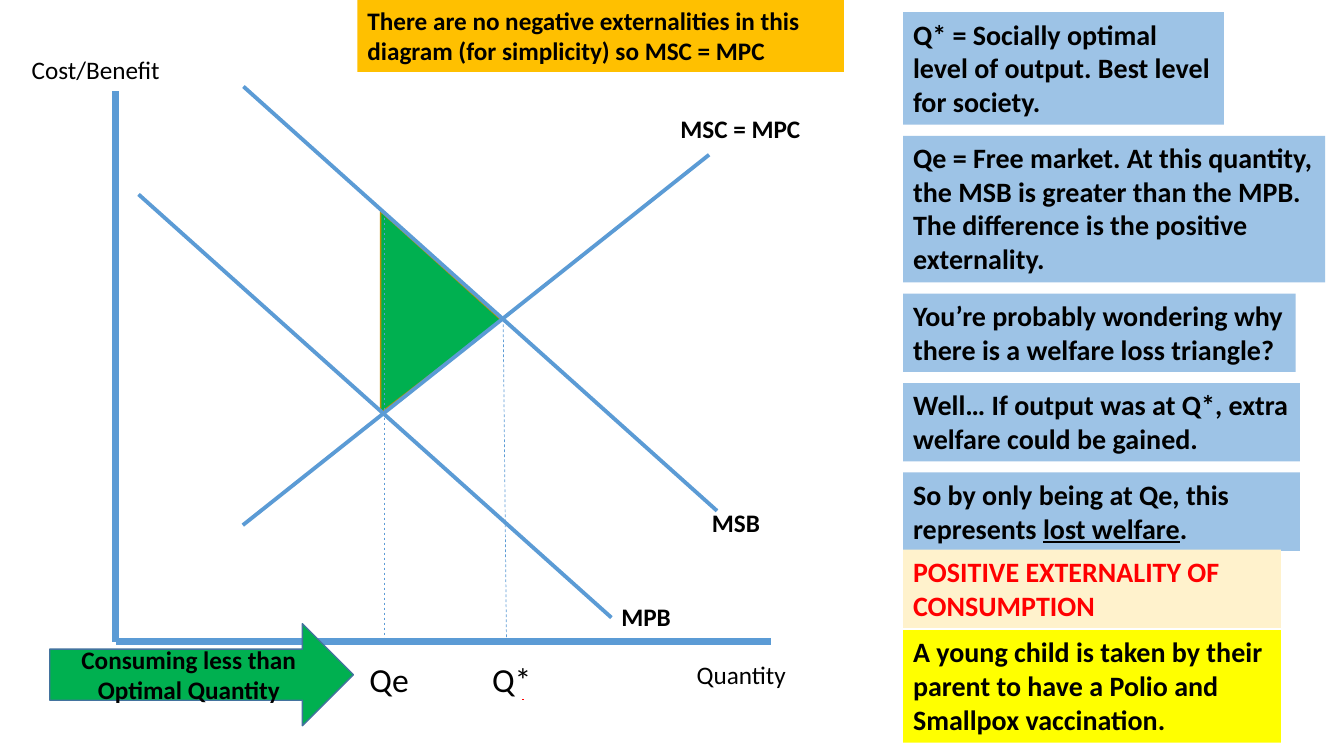
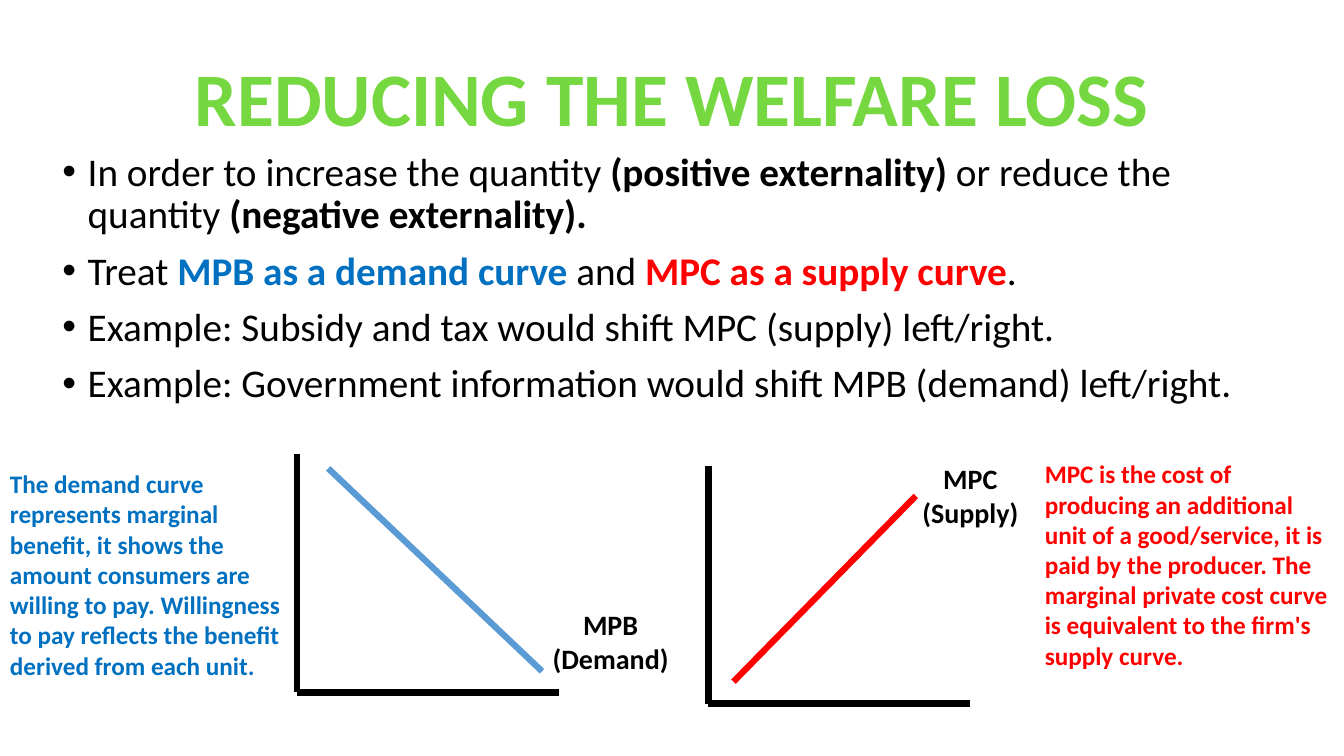
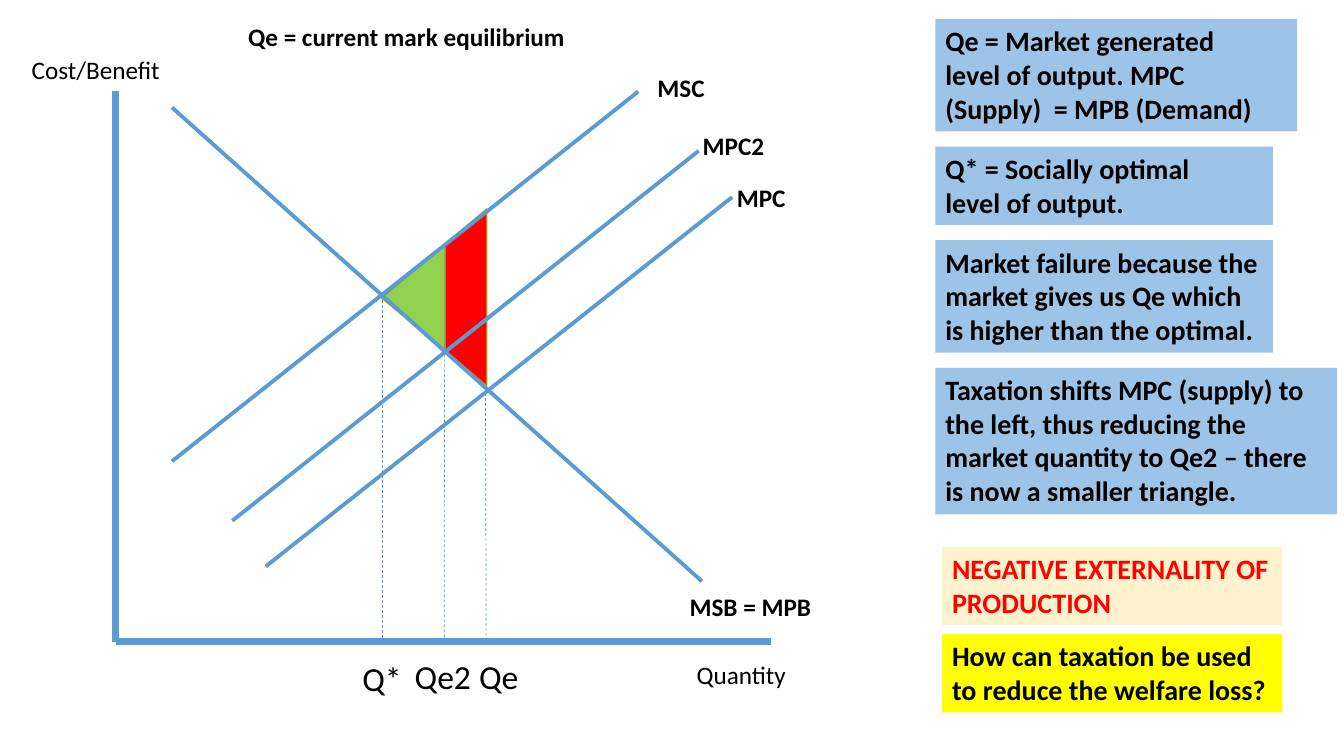
import dataclasses

import pptx
import pptx.dml.color
import pptx.enum.dml
import pptx.enum.shapes
import pptx.enum.text
import pptx.oxml
import pptx.util

RGBColor = pptx.dml.color.RGBColor
Inches = pptx.util.Inches
Pt = pptx.util.Pt
Shapes = pptx.enum.shapes.MSO_SHAPE
Align = pptx.enum.text.PP_ALIGN
Anchor = pptx.enum.text.MSO_ANCHOR

BLACK = RGBColor(0x00, 0x00, 0x00)
RED = RGBColor(0xFF, 0x00, 0x00)
BLUE = RGBColor(0x5B, 0x9B, 0xD5)
DARK_BLUE = RGBColor(0x43, 0x73, 0x9E)
TEXT_BLUE = RGBColor(0x00, 0x70, 0xC0)
PALE_BLUE = RGBColor(0x9D, 0xC3, 0xE6)
CREAM = RGBColor(0xFF, 0xF2, 0xCC)
YELLOW = RGBColor(0xFF, 0xFF, 0x00)
AMBER = RGBColor(0xFF, 0xC0, 0x00)
GOLD = RGBColor(0xBD, 0x8E, 0x00)
GREEN = RGBColor(0x00, 0xB0, 0x50)
LIME = RGBColor(0x92, 0xD0, 0x50)
TITLE_GREEN = RGBColor(0x75, 0xD8, 0x40)

FONT = "Calibri"
LINE_HEIGHT = 1.22 / 72  # inches per point of text
CURVE_WEIGHT = 2.75
AXIS_WEIGHT = 5


@dataclasses.dataclass
class Box:
    """An area in inches; places inside it are given in percent of its size."""
    left: float
    top: float
    width: float
    height: float

    def point(self, x, y):
        return self.left + self.width * x / 100, self.top + self.height * y / 100

    def area(self, x, y, width, height):
        return Box(*self.point(x, y), self.width * width / 100, self.height * height / 100)

    def lengths(self):
        return [Inches(side) for side in (self.left, self.top, self.width, self.height)]


PAGE = Box(0, 0, 13.33, 7.5)
PLOT = PAGE.area(8.6, 12.1, 48.8, 72.8)


def text_height(size, lines):
    return 0.1 + lines * size * LINE_HEIGHT


def fill_para(para, spans, size, color=BLACK, bold=False, align=Align.LEFT):
    """Write a string, or a list of (text, font settings) spans."""
    para.alignment = align
    para.font.name = FONT
    para.font.size = Pt(size)
    para.font.bold = bold
    para.font.color.rgb = color
    if isinstance(spans, str):
        spans = [(spans, {})]
    for text, settings in spans:
        for number, line in enumerate(text.split("\n")):
            if number:
                para.add_line_break()
            span = para.add_run()
            span.text = line
            span.font.bold = settings.get("bold")
            span.font.underline = settings.get("underline")
            if "color" in settings:
                span.font.color.rgb = settings["color"]


def add_text(page, box, spans, size, wrap=True, **style):
    shape = page.shapes.add_textbox(*box.lengths())
    shape.text_frame.word_wrap = wrap
    fill_para(shape.text_frame.paragraphs[0], spans, size, **style)
    return shape


def add_label(page, box, x, y, width, text, size=18, **style):
    left, top = box.point(x, y)
    height = text_height(size, text.count("\n") + 1)
    add_text(page, Box(left, top, width, height), text, size, wrap=False, **style)


def add_card(page, box, spans, size, fill, **style):
    card = add_text(page, box, spans, size, bold=True, **style)
    card.fill.solid()
    card.fill.fore_color.rgb = fill


def stack_cards(page, column, gap, cards):
    """Stack (width share, line count, spans, fill, text colour) downwards."""
    top = column.top
    for share, lines, spans, fill, color in cards:
        height = text_height(20, lines)
        box = Box(column.left, top, column.width * share, height)
        add_card(page, box, spans, 20, fill, color=color)
        top += height + gap


def add_line(page, box, start, end, color=BLUE, weight=CURVE_WEIGHT, dashed=False):
    ends = [Inches(value) for value in (*box.point(*start), *box.point(*end))]
    line = page.shapes.add_connector(pptx.enum.shapes.MSO_CONNECTOR.STRAIGHT, *ends)
    line.line.color.rgb = color
    line.line.width = Pt(weight)
    if dashed:
        line.line.dash_style = pptx.enum.dml.MSO_LINE.DASH
    line._element.spPr.append(pptx.oxml.parse_xml(
        '<a:effectLst xmlns:a="http://schemas.openxmlformats.org/drawingml/2006/main"/>'))


def add_axes(page, box, color):
    add_line(page, box, (0, 0), (0, 100), color, AXIS_WEIGHT)
    add_line(page, box, (0, 100), (100, 100), color, AXIS_WEIGHT)


def add_shape(page, kind, box, fill, outline):
    shape = page.shapes.add_shape(kind, *box.lengths())
    shape.shadow.inherit = False
    shape.fill.solid()
    shape.fill.fore_color.rgb = fill
    shape.line.color.rgb = outline
    shape.line.width = Pt(1)
    return shape


def add_welfare_triangle(page, box, centre, depth, base, fill, rotation, apex=0.5):
    """Draw a triangle lying on its side, its base upright."""
    x, y = box.point(*centre)
    width, height = box.height * base / 100, box.width * depth / 100
    frame = Box(x - width / 2, y - height / 2, width, height)
    triangle = add_shape(page, Shapes.ISOSCELES_TRIANGLE, frame, fill, GOLD)
    triangle.adjustments[0] = apex
    triangle.rotation = rotation


def draw_market(page, box, curves, drops, curve_labels, quantities):
    add_axes(page, box, BLUE)
    add_label(page, box, -14.3, -7.7, 1.49, "Cost/Benefit")
    add_label(page, box, 87.1, 102.2, 1.1, "Quantity")
    for start, end in curves:
        add_line(page, box, start, end)
    for start, end in drops:
        add_line(page, box, start, end, weight=0.5, dashed=True)
    for label in curve_labels:
        add_label(page, box, *label, bold=True)
    for label in quantities:
        add_label(page, box, *label, size=24)


def draw_mini_market(page, box, curve, color, label):
    add_line(page, box, *curve, color, 4.5)
    add_label(page, box, *label, size=20, bold=True, align=Align.CENTER)
    add_axes(page, box, BLACK)


def add_consumption_page(deck):
    page = deck.slides.add_slide(deck.slide_layouts[6])
    add_welfare_triangle(page, PLOT, (49.6, 40.1), 18.4, 36.6, GREEN, 90, 0.54)
    draw_market(
        page, PLOT,
        curves=[((19.5, -0.9), (91.7, 76.2)),
                ((19.4, 78.8), (90.5, 11.5)),
                ((3.5, 18.7), (75.6, 95.6))],
        drops=[((59.1, 41.4), (59.6, 100)), ((41, 22), (41, 100))],
        curve_labels=[(89.4, 74.7, 0.68, "MSB"),
                      (84.6, 3.1, 1.39, "MSC = MPC"),
                      (75.6, 91.8, 0.7, "MPB")],
        quantities=[(37.2, 102.2, 0.6, "Qe"), (55.9, 102.2, 0.6, "Q*")])
    add_line(page, PLOT, (62.1, 110.4), (62.1, 110.6), RED, 1.5)

    stack_cards(page, PAGE.area(67.2, 1.6, 31.4, 70), 0.11, [
        (0.76, 3, "Q* = Socially optimal\nlevel of output. Best level\nfor society.",
         PALE_BLUE, BLACK),
        (1, 4, "Qe = Free market. At this quantity,\nthe MSB is greater than the MPB.\n"
         "The difference is the positive\nexternality.", PALE_BLUE, BLACK),
        (0.93, 2, "You’re probably wondering why\nthere is a welfare loss triangle?",
         PALE_BLUE, BLACK),
        (0.94, 2, "Well… If output was at Q*, extra\nwelfare could be gained.",
         PALE_BLUE, BLACK),
        (0.94, 2, [("So by only being at Qe, this\nrepresents ", {}),
                   ("lost welfare", {"underline": True}), (".", {})],
         PALE_BLUE, BLACK)])
    stack_cards(page, PAGE.area(67.2, 72.7, 28.1, 26), 0.02, [
        (1, 2, "POSITIVE EXTERNALITY OF CONSUMPTION", CREAM, RED),
        (1, 3, "A young child is taken by their parent to have a Polio and "
         "Smallpox vaccination.", YELLOW, BLACK)])

    arrow = add_shape(page, Shapes.RIGHT_ARROW, PAGE.area(3.7, 82.5, 22.6, 13.5),
                      GREEN, DARK_BLUE)
    arrow.text_frame.word_wrap = True
    arrow.text_frame.vertical_anchor = Anchor.MIDDLE
    fill_para(arrow.text_frame.paragraphs[0], "Consuming less than Optimal Quantity",
              18, bold=True, align=Align.CENTER)
    add_card(page, PAGE.area(26.6, 0, 36.2, 9.5),
             "There are no negative externalities in this diagram (for simplicity) "
             "so MSC = MPC", 18, AMBER)


def place_placeholder(shape, box):
    shape.left, shape.top, shape.width, shape.height = box.lengths()
    shape.text_frame.auto_size = pptx.enum.text.MSO_AUTO_SIZE.NONE
    shape.text_frame.word_wrap = True
    shape.text_frame.vertical_anchor = Anchor.TOP
    return shape.text_frame


def fill_bullets(frame, bullets):
    for number, spans in enumerate(bullets):
        para = frame.add_paragraph() if number else frame.paragraphs[0]
        fill_para(para, spans, 28)
        para.line_spacing = 0.9
        para.space_before = Pt(10)
        properties = para._p.get_or_add_pPr()
        properties.set("marL", str(Inches(0.25)))
        properties.set("indent", str(-Inches(0.25)))


def add_reduction_page(deck):
    page = deck.slides.add_slide(deck.slide_layouts[1])
    title = place_placeholder(page.shapes.title, PAGE.area(11.7, 6, 76.6, 13.5))
    fill_para(title.paragraphs[0], "REDUCING THE WELFARE LOSS", 54,
              color=TITLE_GREEN, bold=True, align=Align.CENTER)
    body = place_placeholder(page.placeholders[1], PAGE.area(3.9, 19.5, 91.9, 63.5))
    strong = {"bold": True}
    fill_bullets(body, [
        [("In order to increase the quantity ", {}), ("(positive externality)", strong),
         (" or reduce the quantity ", {}), ("(negative externality).", strong)],
        [("Treat ", {}), ("MPB as a demand curve ", {"bold": True, "color": TEXT_BLUE}),
         ("and ", {}), ("MPC as a supply curve", {"bold": True, "color": RED}), (".", {})],
        "Example: Subsidy and tax would shift MPC (supply) left/right.",
        "Example: Government information would shift MPB (demand) left/right."])

    draw_mini_market(page, PAGE.area(22.1, 60.1, 19.5, 31.5),
                     ((11.9, 5.9), (93.5, 91.1)), BLUE,
                     (93.5, 62.3, 1.36, "MPB\n(Demand)"))
    draw_mini_market(page, PAGE.area(52.7, 61.6, 19.5, 31.5),
                     ((79.2, 12.7), (9.6, 90.7)), RED,
                     (77.7, -3.8, 1.16, "MPC\n(Supply)"))
    add_text(page, PAGE.area(0, 61.3, 22.2, 29.6),
             "The demand curve represents marginal benefit, it shows the amount consumers "
             "are willing to pay. Willingness to pay reflects the benefit derived from "
             "each unit.", 18, color=TEXT_BLUE, bold=True)
    add_text(page, PAGE.area(77, 60, 22.7, 29.6),
             "MPC is the cost of producing an additional unit of a good/service, it is "
             "paid by the producer. The marginal private cost curve is equivalent to the "
             "firm's supply curve.", 18, color=RED, bold=True)


def add_taxation_page(deck):
    page = deck.slides.add_slide(deck.slide_layouts[6])
    add_welfare_triangle(page, PLOT, (48.6, 37.4), 16, 32.1, RED, 270)
    add_welfare_triangle(page, PLOT, (45.4, 37.5), 9.7, 19.2, LIME, 270)
    draw_market(
        page, PLOT,
        curves=[((8.6, 2.9), (89.4, 89)),
                ((17.8, 78), (88.9, 10.8)),
                ((8.6, 67.2), (79.7, 0)),
                ((22.9, 86.3), (94, 19.2))],
        drops=[((56.4, 54.8), (56.5, 100)),
               ((40.7, 37), (40.7, 100)),
               ((50.2, 27.8), (50.1, 100))],
        curve_labels=[(86, 89.9, 1.42, "MSB = MPB"),
                      (93.2, 15.6, 0.69, "MPC"),
                      (81.1, -4.4, 0.68, "MSC"),
                      (88, 6.2, 0.82, "MPC2"),
                      (18.7, -13.6, 3.37, "Qe = current mark equilibrium")],
        quantities=[(53.9, 101.6, 0.6, "Qe"),
                    (36.1, 102, 0.6, "Q*"),
                    (44.1, 101.6, 0.77, "Qe2")])

    stack_cards(page, PAGE.area(69.6, 2.5, 29.9, 66), 0.15, [
        (0.9, 3, "Qe = Market generated\nlevel of output. MPC (Supply)  = MPB (Demand)",
         PALE_BLUE, BLACK),
        (0.84, 2, "Q* = Socially optimal\nlevel of output.", PALE_BLUE, BLACK),
        (0.84, 3, "Market failure because the\nmarket gives us Qe which\n"
         "is higher than the optimal.", PALE_BLUE, BLACK),
        (1, 4, "Taxation shifts MPC (supply) to the left, thus reducing the market "
         "quantity to Qe2 – there is now a smaller triangle.", PALE_BLUE, BLACK)])
    stack_cards(page, PAGE.area(70.1, 72.3, 25.3, 22), 0.09, [
        (1, 2, "NEGATIVE EXTERNALITY OF PRODUCTION", CREAM, RED),
        (1, 2, "How can taxation be used to reduce the welfare loss?", YELLOW, BLACK)])


def main():
    deck = pptx.Presentation()
    deck.slide_width = Inches(PAGE.width)
    deck.slide_height = Inches(PAGE.height)
    add_consumption_page(deck)
    add_reduction_page(deck)
    add_taxation_page(deck)
    deck.save("out.pptx")


if __name__ == "__main__":
    main()
